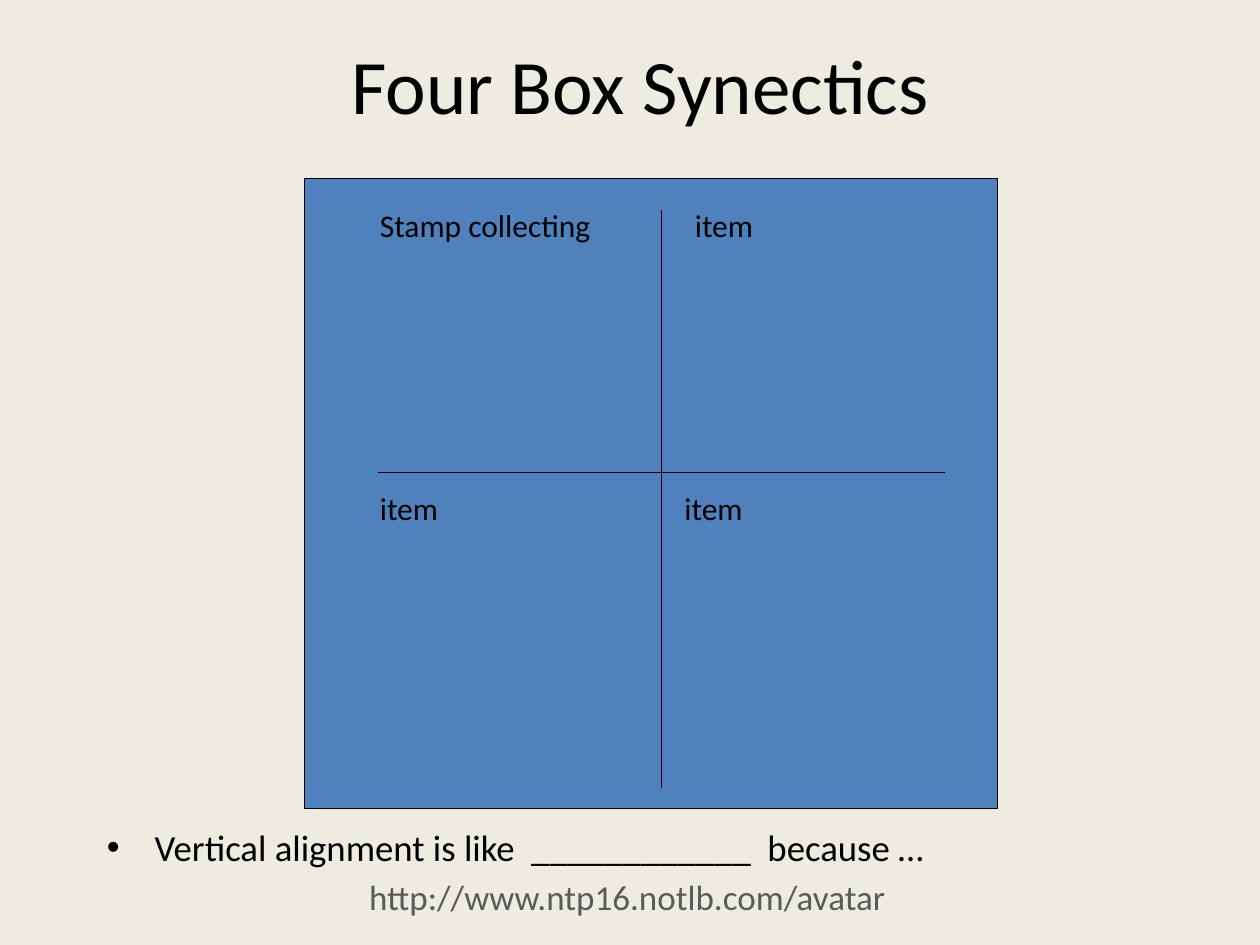
from lxml import etree
from pptx import Presentation
from pptx import util as u
from pptx.dml.color import RGBColor
from pptx.enum import shapes, text
from pptx.oxml import ns

BLACK = RGBColor(0x00, 0x00, 0x00)
GRAY = RGBColor(0x5A, 0x5A, 0x5A)
BLUE = RGBColor(0x4F, 0x81, 0xBD)
CREAM = RGBColor(0xEE, 0xEC, 0xE1)
FONT = "Calibri"
COLS, ROWS = 120, 90
CELL = u.Inches(10) // COLS


def grid(*cells):
    """Turn grid columns and rows into lengths."""
    return [u.Emu(round(c * CELL)) for c in cells]


def add_text(s, box, words, size, color=BLACK, align=text.PP_ALIGN.LEFT,
             anchor=text.MSO_ANCHOR.TOP):
    """Place one line of text in a box and return its paragraph."""
    tf = s.shapes.add_textbox(*grid(*box)).text_frame
    tf.word_wrap = True
    tf.vertical_anchor = anchor
    p = tf.paragraphs[0]
    p.alignment = align
    r = p.add_run()
    r.text = words
    r.font.name, r.font.size = FONT, u.Pt(size)
    r.font.color.rgb = color
    return p


def add_bullet(s, box, words):
    """Place the bulleted sentence with a hanging indent."""
    pPr = add_text(s, box, words, 21)._p.get_or_add_pPr()
    indent = u.Inches(0.38)
    pPr.set("marL", str(indent))
    pPr.set("indent", str(-indent))
    etree.SubElement(pPr, ns.qn("a:buFont")).set("typeface", "Arial")
    etree.SubElement(pPr, ns.qn("a:buChar")).set("char", "•")


def add_divider(s, x1, y1, x2, y2):
    """Draw a thin black line between two grid points."""
    line = s.shapes.add_connector(shapes.MSO_CONNECTOR.STRAIGHT, *grid(x1, y1, x2, y2))
    line.line.color.rgb = BLACK
    line.line.width = u.Pt(0.75)
    etree.SubElement(line._element.spPr, ns.qn("a:effectLst"))


def add_four_box(s, box, labels):
    """Draw the blue panel, its cross and the four labels."""
    x, y, w, h = box
    sp = s.shapes.add_shape(shapes.MSO_SHAPE.RECTANGLE, *grid(*box))
    sp.shadow.inherit = False
    sp.fill.solid()
    sp.fill.fore_color.rgb = BLUE
    sp.line.color.rgb = BLACK
    sp.line.width = u.Pt(0.75)
    add_divider(s, x + 7, y + 28, x + w - 5, y + 28)
    add_divider(s, x + 34, y + 3, x + 34, y + h - 2)
    for words, dx, dy, width in labels:
        add_text(s, (x + dx, y + dy, width, 5), words, 18)


def main():
    """Build and save the slide."""
    prs = Presentation()
    prs.slide_width, prs.slide_height = grid(COLS, ROWS)
    s = prs.slides.add_slide(prs.slide_layouts[6])
    s.background.fill.solid()
    s.background.fill.fore_color.rgb = CREAM
    center = text.PP_ALIGN.CENTER
    add_text(s, (26.25, 82.75, 67, 5.25), "http://www.ntp16.notlb.com/avatar", 20,
             GRAY, center)
    add_text(s, (13, 1, 96, 14), "Four Box Synectics", 44, BLACK, center,
             text.MSO_ANCHOR.MIDDLE)
    add_bullet(s, (9, 78, 96, 6), "Vertical alignment is like  ____________  because …")
    add_four_box(s, (29, 17, 66, 60), [
        ("Stamp collecting", 6, 2, 25),
        ("item", 36, 2, 12),
        ("item", 6, 29, 12),
        ("item", 35, 29, 12),
    ])
    prs.save("out.pptx")


if __name__ == "__main__":
    main()
